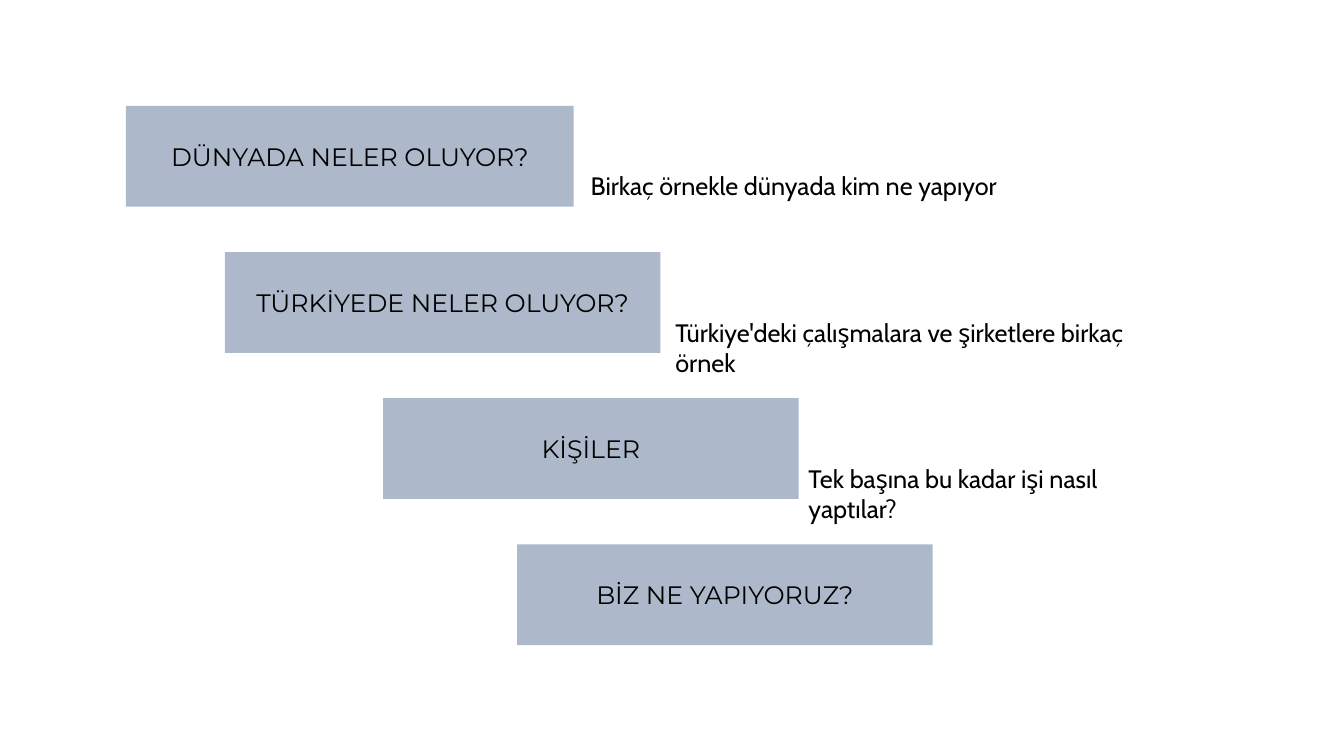
from dataclasses import dataclass

from pptx import Presentation
from pptx.dml.color import RGBColor
from pptx.enum.shapes import MSO_SHAPE as Preset
from pptx.enum.text import MSO_ANCHOR as Anchor, MSO_AUTO_SIZE as AutoSize, PP_ALIGN as Align
from pptx.util import Inches, Pt


@dataclass(frozen=True)
class Theme:
    box_fill: RGBColor = RGBColor(0xAD, 0xB9, 0xCA)
    ink: RGBColor = RGBColor(0, 0, 0)
    heading_font: str = "Montserrat"
    note_font: str = "Cabin"
    text_size: int = 18


# Grid: columns one inch wide, four rows of equal height
COLUMN = Inches(1)
ROW = Inches(1.45)
FIRST_ROW = Inches(1.05)
BOX_ROWS = 0.69
NOTE_DROP = 0.41
NOTE_ROWS = 0.28


def write_text(frame, text, *, font, size, color, align=Align.LEFT, anchor=Anchor.TOP):
    frame.word_wrap = True
    frame.vertical_anchor = anchor
    paragraph = frame.paragraphs[0]
    paragraph.alignment = align
    run = paragraph.add_run()
    run.text = text
    run.font.name = font
    run.font.size = Pt(size)
    run.font.color.rgb = color


class SlideBuilder:
    def __init__(self, slide, theme):
        self.slide = slide
        self.theme = theme

    def place(self, column, row, columns, rows):
        lengths = (column * COLUMN, FIRST_ROW + row * ROW, columns * COLUMN, rows * ROW)
        return [round(length) for length in lengths]

    def heading_box(self, text, column, row, columns):
        shape = self.slide.shapes.add_shape(
            Preset.RECTANGLE, *self.place(column, row, columns, BOX_ROWS))
        shape.shadow.inherit = False
        shape.fill.solid()
        shape.fill.fore_color.rgb = self.theme.box_fill
        shape.line.fill.background()
        write_text(shape.text_frame, text, font=self.theme.heading_font,
                   size=self.theme.text_size, color=self.theme.ink,
                   align=Align.CENTER, anchor=Anchor.MIDDLE)

    def note(self, text, column, row, columns):
        box = self.slide.shapes.add_textbox(
            *self.place(column, row + NOTE_DROP, columns, NOTE_ROWS))
        write_text(box.text_frame, text, font=self.theme.note_font,
                   size=self.theme.text_size, color=self.theme.ink)
        box.text_frame.auto_size = AutoSize.SHAPE_TO_FIT_TEXT


# Text, left column and width in columns, from the top row down
HEADINGS = [
    ("DÜNYADA NELER OLUYOR?", 1.25, 4.44),
    ("TÜRKİYEDE NELER OLUYOR?", 2.23, 4.32),
    ("KİŞİLER", 3.8, 4.12),
    ("BİZ NE YAPIYORUZ?", 5.13, 4.12),
]
NOTES = [
    ("Birkaç örnekle dünyada kim ne yapıyor", 5.76, 4.28),
    ("Türkiye'deki çalışmalara ve şirketlere birkaç örnek", 6.6, 5.2),
    ("Tek başına bu kadar işi nasıl yaptılar?", 7.92, 3.95),
]


def main():
    presentation = Presentation()
    presentation.slide_width = Inches(13.33)
    presentation.slide_height = Inches(7.5)
    slide = presentation.slides.add_slide(presentation.slide_layouts[6])
    builder = SlideBuilder(slide, Theme())

    # Staircase of headings
    for row, (text, column, columns) in enumerate(HEADINGS):
        builder.heading_box(text, column, row, columns)

    # Notes beside the headings
    for row, (text, column, columns) in enumerate(NOTES):
        builder.note(text, column, row, columns)

    presentation.save("out.pptx")


if __name__ == "__main__":
    main()
